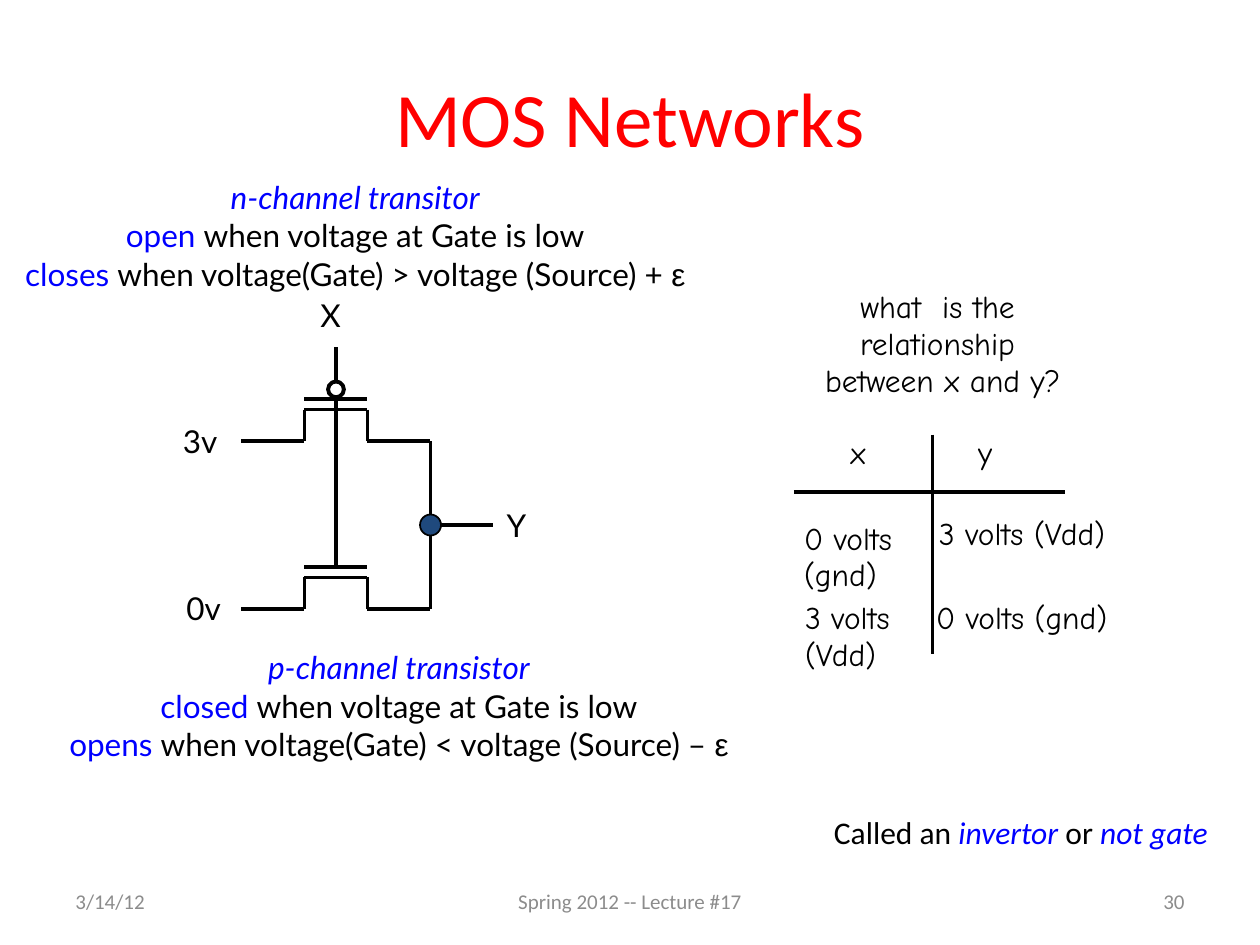
from pptx import Presentation
from pptx.dml.color import RGBColor
from pptx.enum.shapes import MSO_CONNECTOR as Connector, MSO_SHAPE as Shape
from pptx.enum.text import MSO_ANCHOR as Anchor, MSO_AUTO_SIZE as AutoSize, PP_ALIGN as Align
from pptx.oxml.ns import qn
from pptx.util import Pt
from lxml.etree import SubElement

COLORS = {"black": "000000", "white": "FFFFFF", "red": "FF0000",
          "blue": "0000FF", "gray": "8C8C8C", "navy": "1F497D"}


class SlideBuilder:
    font = "Lato"
    size = 18
    leading = 21
    stroke = 2.25

    def __init__(self, page):
        self.page = page

    def color(self, name):
        return RGBColor.from_string(COLORS[name])

    def format_span(self, span, font, size, color, italic=False):
        span.font.name = font
        span.font.size = Pt(size)
        span.font.color.rgb = self.color(color)
        span.font.italic = italic

    def box(self, left, top, width, height, anchor=Anchor.TOP, wrap=False, tight=True):
        box = self.page.shapes.add_textbox(Pt(left), Pt(top), Pt(width), Pt(height))
        frame = box.text_frame
        frame.auto_size = AutoSize.NONE
        frame.word_wrap = wrap
        frame.vertical_anchor = anchor
        if tight:
            frame.margin_left = frame.margin_right = Pt(1.5)
            frame.margin_top = frame.margin_bottom = Pt(2)
        return frame

    def label(self, text, left, top, width=29, height=32, font=None, align=Align.LEFT):
        frame = self.box(left, top, width, height)
        frame.text = text
        for para in frame.paragraphs:
            para.alignment = align
            para.line_spacing = Pt(self.leading)
            for span in para.runs:
                self.format_span(span, font or self.font, self.size, "black")

    def banner(self, text, left, top, width, height, size, color, align):
        frame = self.box(left, top, width, height, Anchor.MIDDLE, True, False)
        frame.text = text
        para = frame.paragraphs[0]
        para.alignment = align
        self.format_span(para.runs[0], "Calibri", size, color)

    def spans(self, para, parts, font):
        for text, color, italic in parts:
            span = para.add_run()
            span.text = text
            self.format_span(span, font, self.size, color, italic)

    def rule_note(self, kind, rules, left, top, width):
        para = self.box(left, top, width, 98.5).paragraphs[0]
        para.alignment = Align.CENTER
        para.line_spacing = Pt(22)
        self.spans(para, [(kind, "blue", True)], self.font)
        for state, condition in rules:
            para.add_line_break()
            self.spans(para, [(state, "blue", False), (condition, "black", False)], self.font)
        self.spans(para, [("ε", "black", False)], "Arial")

    def remark(self, parts, left, top, width, height):
        frame = self.box(left, top, width, height, tight=False)
        frame.auto_size = AutoSize.SHAPE_TO_FIT_TEXT
        self.spans(frame.paragraphs[0], parts, "Calibri")

    def line(self, start, end, weight=None, shapes=None):
        shapes = shapes or self.page.shapes
        line = shapes.add_connector(Connector.STRAIGHT, *map(Pt, start + end))
        line.line.color.rgb = self.color("black")
        line.line.width = Pt(weight or self.stroke)
        SubElement(line._element.spPr, qn("a:effectLst"))

    def circle(self, center, diameter, fill, weight, shapes=None):
        shapes = shapes or self.page.shapes
        left, top = (value - diameter / 2 for value in center)
        circle = shapes.add_shape(Shape.OVAL, Pt(left), Pt(top), Pt(diameter), Pt(diameter))
        circle.shadow.inherit = False
        circle.fill.solid()
        circle.fill.fore_color.rgb = self.color(fill)
        circle.line.color.rgb = self.color("black")
        circle.line.width = Pt(weight)

    def transistor(self, left, base, inverted=False):
        group = self.page.shapes.add_group_shape().shapes
        source, middle, drain, right = left + 36, left + 54, left + 72, left + 108
        channel, gate = base - 18, base - 24
        outline = [(left, base), (source, base), (source, channel),
                   (drain, channel), (drain, base), (right, base)]
        for start, end in zip(outline, outline[1:]):
            self.line(start, end, shapes=group)
        self.line((source, gate), (drain, gate), shapes=group)
        self.line((middle, gate), (middle, gate - 18), shapes=group)
        if inverted:
            self.circle((middle, gate - 5.5), 9, "white", self.stroke, group)


def main():
    deck = Presentation()
    deck.slide_width, deck.slide_height = Pt(720), Pt(540)
    page = deck.slides.add_slide(deck.slide_layouts[6])
    slide = SlideBuilder(page)

    slide.banner("MOS Networks", 36, 21.6, 648, 90, 44, "red", Align.CENTER)

    upper, lower, output = 252, 348, 300
    slide.line((246, upper), (246, lower))
    slide.line((246, output), (282, output))
    slide.line((192, 312), (192, 198))
    slide.transistor(138, lower)
    slide.transistor(138, upper, inverted=True)
    slide.circle((246, output), 12, "navy", 1)
    for text, left, top in [("X", 181.5, 168), ("Y", 288, 288),
                            ("3v", 103, 240), ("0v", 105, 335)]:
        slide.label(text, left, top)

    slide.rule_note("n-channel transitor",
                    [("open ", "when voltage at Gate is low"),
                     ("closes ", "when voltage(Gate) > voltage (Source) + ")],
                    8, 99.3, 390)
    slide.rule_note("p-channel transistor",
                    [("closed ", "when voltage at Gate is low"),
                     ("opens ", "when voltage(Gate) < voltage (Source) – ")],
                    33, 368, 390)

    hand = "Comic Neue"
    slide.label("what  is the \vrelationship \vbetween x and y?", 456, 162.7, 165.5, 74,
                hand, Align.CENTER)
    slide.line((453.6, 281), (608.4, 281), 2)
    slide.line((532.8, 248.4), (532.8, 373.7), 2)
    for text, left, top, width in [("x", 484.5, 246, 29), ("y", 557.5, 246, 29),
                                   ("0 volts \v(gnd)", 458, 295, 70),
                                   ("3 volts (Vdd)", 535, 292.5, 105),
                                   ("3 volts\n(Vdd)", 458.5, 340.5, 70),
                                   ("0 volts (gnd)", 533.5, 340.5, 105)]:
        slide.label(text, left, top, width, font=hand)

    slide.remark([("Called an ", "black", False), ("invertor ", "blue", True),
                  ("or ", "black", False), ("not gate", "blue", True)],
                 469.5, 461.3, 235, 29)

    for text, left, width, align in [("3/14/12", 36, 168, Align.LEFT),
                                     ("Spring 2012 -- Lecture #17", 246, 228, Align.CENTER),
                                     ("30", 516, 168, Align.RIGHT)]:
        slide.banner(text, left, 500.5, width, 28.75, 12, "gray", align)

    deck.save("out.pptx")


if __name__ == "__main__":
    main()
